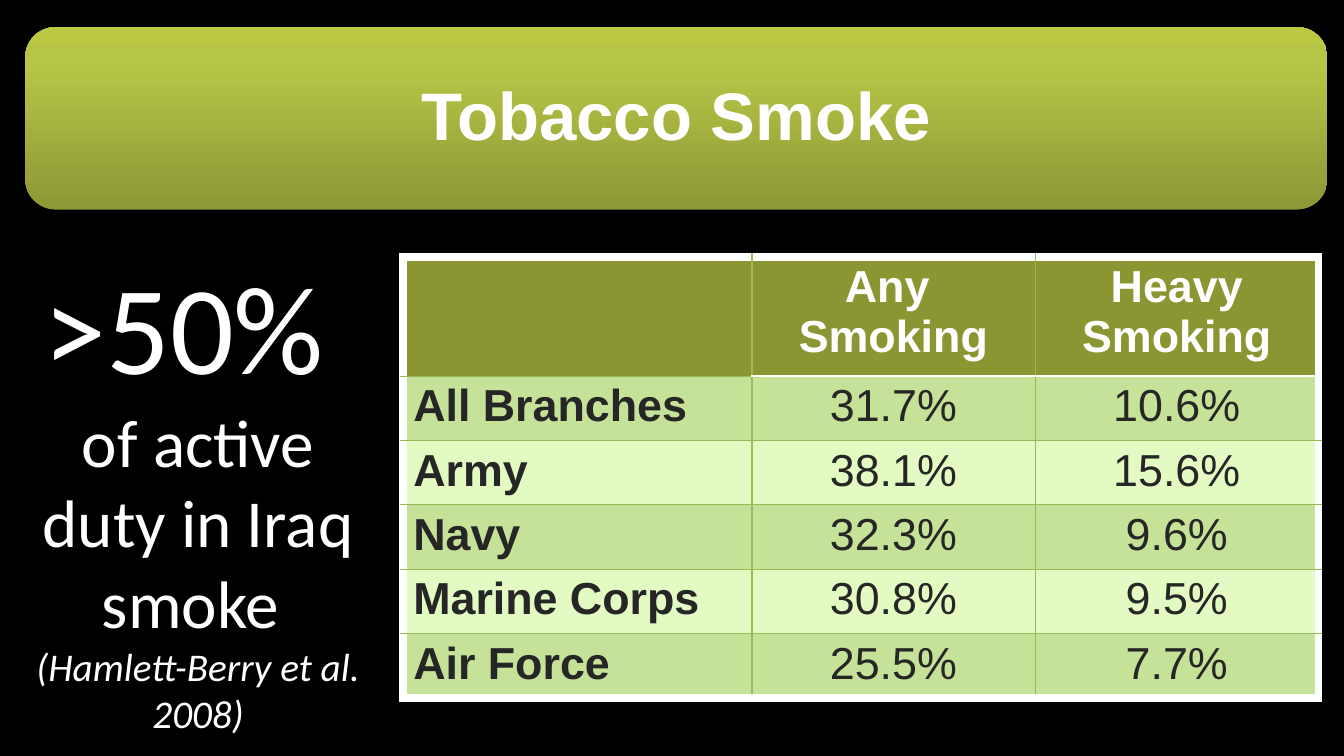
from copy import deepcopy

from pptx import Presentation
from pptx.dml.color import RGBColor
from pptx.enum.shapes import MSO_SHAPE as Form
from pptx.enum.text import MSO_ANCHOR as Anchor, PP_ALIGN as Align
from pptx.oxml import parse_xml
from pptx.oxml.ns import nsdecls, qn
from pptx.util import Pt

WHITE, INK = "FFFFFF", "262626"
OLIVE, LEAF, MOSS = "8B9633", "98B955", "9BBB59"
BANDS = ["C6E198", "E3FBC2"]
GLOSS = [(0, "8D9836"), (0.8, "B7C546"), (1, "BAC843")]

ROWS = [
    ("All Branches", "31.7%", "10.6%"),
    ("Army", "38.1%", "15.6%"),
    ("Navy", "32.3%", "9.6%"),
    ("Marine Corps", "30.8%", "9.5%"),
    ("Air Force", "25.5%", "7.7%"),
]
HEADS = [[], ["Any ", "Smoking"], ["Heavy Smoking"]]
WIDTHS = [249, 202.4, 202.4]
HEAD_HIGH, ROW_HIGH = 85, 46


def tint(code):
    return RGBColor.from_string(code)


class Deck:
    def __init__(self, wide, high, back):
        self.show = Presentation()
        self.show.slide_width, self.show.slide_height = Pt(wide), Pt(high)
        self.slide = self.show.slides.add_slide(self.show.slide_layouts[6])
        self.slide.background.fill.solid()
        self.slide.background.fill.fore_color.rgb = tint(back)

    def add_text(self, para, text, size, face, color=WHITE, bold=False,
                 slant=False, align=Align.CENTER):
        para.alignment = align
        run = para.add_run()
        run.text = text
        font = run.font
        font.size, font.name = Pt(size), face
        font.bold, font.italic = bold, slant
        font.color.rgb = tint(color)

    def panel(self, box, stops):
        """Add a rounded panel shaded from bottom to top."""
        shape = self.slide.shapes.add_shape(Form.ROUNDED_RECTANGLE, *map(Pt, box))
        shape.shadow.inherit = False
        shape.line.fill.background()
        shape.fill.gradient()
        shape.fill.gradient_angle = 90
        chain = shape._element.spPr.find(qn("a:gradFill")).find(qn("a:gsLst"))
        chain.append(deepcopy(chain[-1]))
        for stop, (place, color) in zip(shape.fill.gradient_stops, stops):
            stop.position = place
            stop.color.rgb = tint(color)

    def frame(self, box, anchor=Anchor.TOP):
        frame = self.slide.shapes.add_textbox(*map(Pt, box)).text_frame
        frame.word_wrap = True
        frame.vertical_anchor = anchor
        return frame

    def grid(self, left, top, widths, heights):
        table = self.slide.shapes.add_table(
            len(heights), len(widths), Pt(left), Pt(top),
            Pt(sum(widths)), Pt(sum(heights))).table
        for col, wide in zip(table.columns, widths):
            col.width = Pt(wide)
        for row, high in zip(table.rows, heights):
            row.height = Pt(high)
        return table

    def cell(self, cell, fill, edges, lines, **style):
        """Fill a cell; edges maps L, R, T and B to (colour, width)."""
        for side, (color, width) in edges.items():
            cell._tc.get_or_add_tcPr().append(parse_xml(
                f'<a:ln{side} {nsdecls("a")} w="{Pt(width)}"><a:solidFill>'
                f'<a:srgbClr val="{color}"/></a:solidFill></a:ln{side}>'))
        cell.fill.solid()
        cell.fill.fore_color.rgb = tint(fill)
        frame = cell.text_frame
        for i, line in enumerate(lines):
            para = frame.add_paragraph() if i else frame.paragraphs[0]
            self.add_text(para, line, 32, "Arial", **style)


def level(row, col):
    """Give the rule that runs above a row."""
    if row in (0, len(ROWS) + 1):
        return WHITE, 6
    return (WHITE, 2) if row == 1 and col else (LEAF, 0.75)


def main():
    deck = Deck(960, 540, "000000")

    deck.panel((18, 19.4, 930.2, 130.3), GLOSS)
    title = deck.frame((46, 26, 874, 117.4), Anchor.MIDDLE).paragraphs[0]
    title.line_spacing = 0.9
    deck.add_text(title, "Tobacco Smoke", 48, "Arial", bold=True)

    claim = deck.frame((3.6, 174.2, 275.8, 358.6))
    parts = [(">50% ", 90), ("of active duty in Iraq smoke ", 48),
             ("(Hamlett-Berry et al. 2008)", 28)]
    for i, (text, size) in enumerate(parts):
        para = claim.add_paragraph() if i else claim.paragraphs[0]
        deck.add_text(para, text, size, "Calibri", slant=size == 28)

    table = deck.grid(288, 183.6, WIDTHS, [HEAD_HIGH] + [ROW_HIGH] * len(ROWS))
    posts = [(WHITE, 6), (MOSS, 2), (LEAF, 0.75), (WHITE, 6)]
    body = [[[text] for text in row] for row in ROWS]
    for r, row in enumerate([HEADS] + body):
        for c, lines in enumerate(row):
            edges = {"L": posts[c], "R": posts[c + 1],
                     "T": level(r, c), "B": level(r + 1, c)}
            deck.cell(table.cell(r, c), BANDS[(r - 1) % 2] if r else OLIVE,
                      edges, lines, color=INK if r else WHITE,
                      bold=r == 0 or c == 0,
                      align=Align.CENTER if c else Align.LEFT)

    deck.show.save("out.pptx")


if __name__ == "__main__":
    main()
